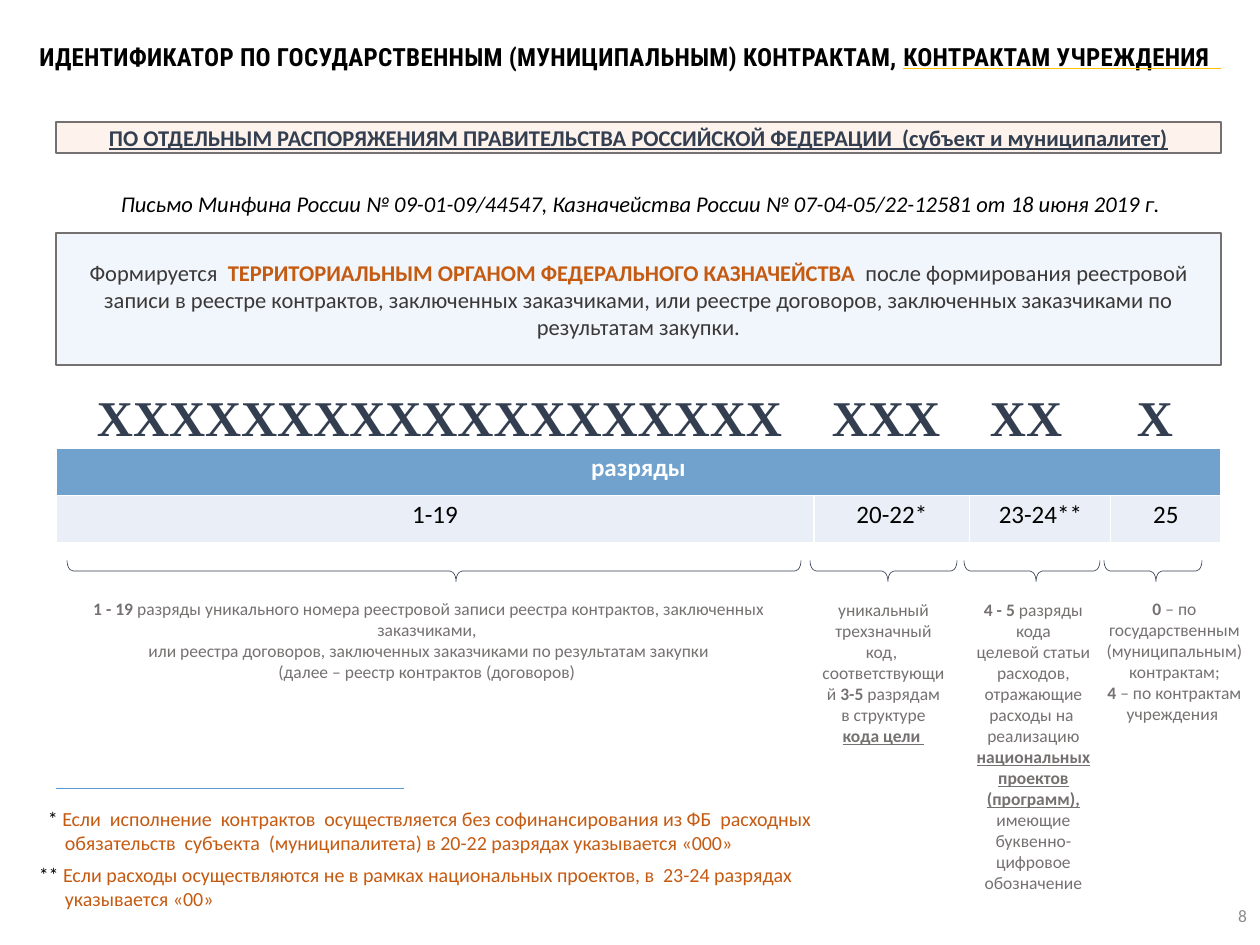
from lxml.etree import SubElement
from pptx import Presentation
from pptx.dml.color import RGBColor
from pptx.enum.shapes import MSO_CONNECTOR, MSO_SHAPE
from pptx.enum.text import MSO_ANCHOR, PP_ALIGN
from pptx.oxml.ns import qn
from pptx.util import Pt

PX = 914400 // 90
GREY, NAVY, RUST, BLACK = "767171", "333F50", "C55A11", "000000"
BOLD = {"bold": True}
KEY = {"bold": True, "underline": True}
ACCENT = {"bold": True, "color": RUST}


def px(*lengths):
    """Turn pixel lengths into EMU."""
    return [length * PX for length in lengths]


def rgb(value):
    """Return the colour of a hex string."""
    return RGBColor.from_string(value)


def paint(fill, color, opacity=100):
    """Fill with a solid colour at an opacity in percent."""
    fill.solid()
    fill.fore_color.rgb = rgb(color)
    if opacity < 100:
        solid = fill._xPr.find(qn("a:solidFill"))
        SubElement(solid[0], qn("a:alpha"), val=str(opacity * 1000))


def style(font, color=None, **settings):
    """Set the colour and other attributes of a font."""
    if color:
        font.color.rgb = rgb(color)
    for name, value in settings.items():
        setattr(font, name, value)


def write(frame, paragraphs, size, color=BLACK, align=PP_ALIGN.CENTER, name="Calibri", **settings):
    """Fill a text frame with paragraphs, each a list of (text, overrides)."""
    for index, spans in enumerate(paragraphs):
        para = frame.add_paragraph() if index else frame.paragraphs[0]
        para.alignment = align
        style(para.font, color, size=Pt(size), name=name, **settings)
        for text, overrides in spans:
            for number, part in enumerate(text.split("\n")):
                if number:
                    para.add_line_break()
                span = para.add_run()
                span.text = part
                style(span.font, **overrides)
    return frame


def set_frame(frame, side, top=5, anchor=MSO_ANCHOR.TOP):
    """Set wrapping, insets and anchor of a text frame."""
    frame.word_wrap = True
    frame.margin_left, frame.margin_right, frame.margin_top, frame.margin_bottom = px(side, side, top, 5)
    frame.vertical_anchor = anchor


def add_text(page, bounds, paragraphs, size, side=11, top=5, anchor=MSO_ANCHOR.TOP, **settings):
    """Add a text box and return its frame."""
    frame = page.shapes.add_textbox(*px(*bounds)).text_frame
    set_frame(frame, side, top, anchor)
    return write(frame, paragraphs, size, **settings)


def add_panel(page, bounds, fill, paragraphs, **settings):
    """Add an outlined rectangle with a pale fill and text."""
    panel = page.shapes.add_shape(MSO_SHAPE.RECTANGLE, *px(*bounds))
    panel.shadow.inherit = False
    paint(panel.fill, fill, 44)
    panel.line.color.rgb = rgb(GREY)
    panel.line.width = Pt(1)
    set_frame(panel.text_frame, 11, anchor=MSO_ANCHOR.MIDDLE)
    write(panel.text_frame, paragraphs, 18, **settings)


def add_brace(page, left, width, middle=571, depth=21):
    """Add a brace that opens upward over a horizontal range."""
    bounds = px(left + (width - depth) / 2, middle - width / 2, depth, width)
    brace = page.shapes.add_shape(MSO_SHAPE.RIGHT_BRACE, *map(int, bounds))
    brace.rotation = 90
    brace.adjustments[0], brace.adjustments[1] = 0.29, 0.47
    brace.shadow.inherit = False
    brace.fill.background()
    brace.line.color.rgb = rgb(NAVY)
    brace.line.width = Pt(0.5)


def add_rule(page, left, right, height):
    """Add the thin rule above the footnotes."""
    rule = page.shapes.add_connector(MSO_CONNECTOR.STRAIGHT, *px(left, height, right, height))
    rule.line.color.rgb = rgb("5B9BD5")
    rule.line.width = Pt(0.5)
    SubElement(rule._element.spPr, qn("a:effectLst"))


def add_digits_table(page, bounds, widths, labels):
    """Add the table of digit ranges under a merged heading."""
    table = page.shapes.add_table(2, len(widths), *px(*bounds)).table
    table.first_row = table.horz_banding = False
    for column, width in zip(table.columns, px(*widths)):
        column.width = width
    for index, label in enumerate(labels):
        paint(table.cell(0, index).fill, "2E75B6", 68)
        cell = table.cell(1, index)
        paint(cell.fill, "EAEFF7")
        write(cell.text_frame, [[(label, {})]], 20, bold=False)
    heading = table.cell(0, 0)
    heading.merge(table.cell(0, len(widths) - 1))
    write(heading.text_frame, [[("разряды", {})]], 20, "FFFFFF", bold=True)


def add_title(page):
    """Add the title with a yellow underline below its last words."""
    spans = [("ИДЕНТИФИКАТОР ПО ГОСУДАРСТВЕННЫМ (МУНИЦИПАЛЬНЫМ) КОНТРАКТАМ, ", {}),
             ("КОНТРАКТАМ УЧРЕЖДЕНИЯ  ", {"underline": True})]
    frame = add_text(page, (30, 36, 1200, 69), [spans], 20, side=9,
                     align=PP_ALIGN.RIGHT, name="Roboto Condensed", bold=True)
    runs = frame.paragraphs[0].runs
    for run in runs:
        run.font._element.set("spc", "20")
    underline = SubElement(runs[-1].font._element, qn("a:uFill"))
    SubElement(SubElement(underline, qn("a:solidFill")), qn("a:srgbClr"), val="FFC000")


def add_identifier(page):
    """Add the digit groups, set apart by tab stops."""
    groups = "\t".join("Х" * count for count in (19, 3, 2, 1))
    frame = add_text(page, (69, 359, 1148, 93), [[(groups, {})]], 40, side=28, top=28,
                     color=NAVY, align=PP_ALIGN.LEFT, name="Times New Roman", bold=True)
    properties = frame.paragraphs[0]._p.get_or_add_pPr()
    stops = properties.makeelement(qn("a:tabLst"))
    for position in px(735, 893, 1040):
        SubElement(stops, qn("a:tab"), pos=str(position), algn="l")
    properties.find(qn("a:defRPr")).addprevious(stops)


def add_footnotes(page):
    """Add the footnotes with hanging indents."""
    notes = [
        [("  * ", {}), ("Если  исполнение  контрактов  осуществляется без софинансирования из ФБ  расходных  "
                        "обязательств  субъекта  (муниципалитета) в 20-22 разрядах указывается «000»", {"color": RUST})],
        [("** ", {}), ("Если расходы осуществляются не в рамках национальных проектов, в  23-24 разрядах "
                       "указывается «00»", {"color": RUST})]]
    frame = add_text(page, (30, 802, 808, 113), notes, 16, side=9, align=PP_ALIGN.LEFT)
    for para in frame.paragraphs:
        para.space_before = Pt(6)
        properties = para._p.get_or_add_pPr()
        properties.set("marL", str(26 * PX))
        properties.set("indent", str(-26 * PX))


def main():
    """Build the slide and save it."""
    deck = Presentation()
    deck.slide_width, deck.slide_height = px(1260, 945)
    page = deck.slides.add_slide(deck.slide_layouts[6])
    add_title(page)
    add_panel(page, (56, 122, 1165, 31), "FBE5D6", [[(
        "ПО ОТДЕЛЬНЫМ РАСПОРЯЖЕНИЯМ ПРАВИТЕЛЬСТВА РОССИЙСКОЙ ФЕДЕРАЦИИ  (субъект и муниципалитет)", {})]],
        color=NAVY, **KEY)
    add_text(page, (112, 185, 1061, 36), [[(
        "Письмо Минфина России № 09-01-09/44547, Казначейства России № 07-04-05/22-12581 от 18 июня 2019 г.", {})]],
        18, side=9, align=PP_ALIGN.LEFT, italic=True)
    add_panel(page, (56, 233, 1165, 132), "DEEBF7", [[
        ("Формируется ", {}), (" ТЕРРИТОРИАЛЬНЫМ ОРГАНОМ ФЕДЕРАЛЬНОГО КАЗНАЧЕЙСТВА  ", ACCENT),
        ("после формирования реестровой записи в реестре контрактов, заключенных заказчиками, "
         "или реестре договоров, заключенных заказчиками по результатам закупки.", {})]], color="3B3838")
    add_identifier(page)
    add_digits_table(page, (56, 448, 1165, 95), (758, 156, 141, 110), ("1-19", "20-22*", "23-24**", "25"))
    for left, width in ((67, 734), (810, 147), (964, 136), (1104, 98)):
        add_brace(page, left, width)
    explanations = [
        ((56, 593, 746, 95), 11, [
            [("1 - 19 ", BOLD), ("разряды уникального номера реестровой записи реестра контрактов, "
                                 "заключенных заказчиками, ", {})],
            [("или реестра договоров, заключенных заказчиками по результатам закупки\n"
              "(далее – реестр контрактов (договоров) ", {})]]),
        ((810, 594, 147, 180), 11, [
            [("уникальный трехзначный код,  соответствующий ", {}), ("3-5", BOLD),
             (" разрядам в структуре ", {}), ("кода цели ", KEY)]]),
        ((965, 594, 137, 308), 11, [
            [("4 - 5 ", BOLD), ("разряды кода", {})],
            [("целевой статьи расходов, отражающие расходы на  реализацию ", {}),
             ("национальных проектов (программ), ", KEY), ("имеющие буквенно-цифровое обозначение", {})]]),
        ((1102, 593, 145, 138), 4, [
            [("0 ", BOLD), ("– по государственным (муниципальным) контрактам;", {})],
            [("4 ", BOLD), ("– по контрактам учреждения ", {})]])]
    for bounds, side, paragraphs in explanations:
        add_text(page, bounds, paragraphs, 14, side=side, color=GREY)
    add_rule(page, 56, 404, 788)
    add_footnotes(page)
    add_text(page, (975, 890, 283, 50), [[("8", {})]], 14, anchor=MSO_ANCHOR.MIDDLE,
             color="8C8C8C", align=PP_ALIGN.RIGHT)
    deck.save("out.pptx")


if __name__ == "__main__":
    main()
